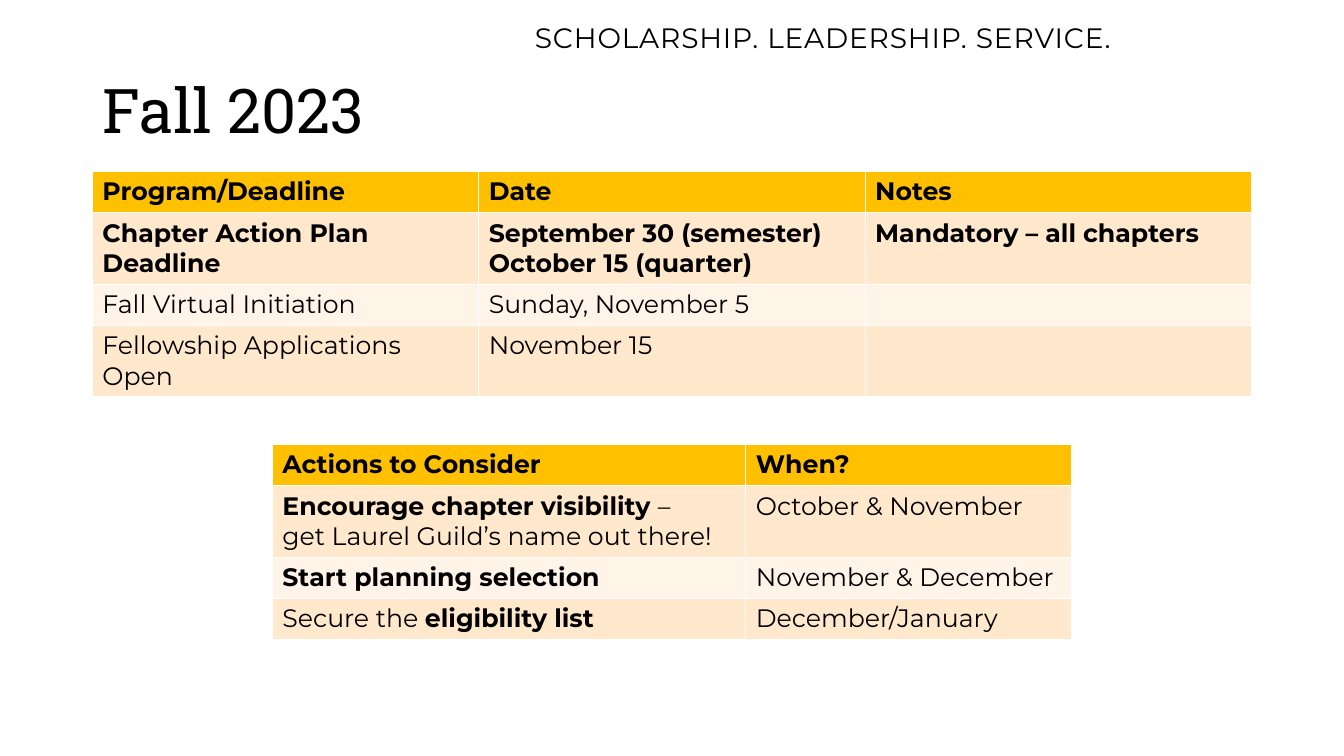
from pptx import Presentation
from pptx.dml.color import RGBColor
from pptx.enum.text import MSO_ANCHOR
from pptx.util import Pt

MIDDLE = MSO_ANCHOR.MIDDLE
BODY, HEAD = "Montserrat", "Roboto Slab"
BLACK, GOLD = "000000", "FFC000"
BANDS = ["FFE8CC", "FFF4E7"]
LINE, PAD = 21.5, 8

# Asterisks switch bold on and off; \n starts a paragraph, \v breaks a line.
DATES = [
    ["*Program/Deadline*", "*Date*", "*Notes*"],
    ["*Chapter Action Plan Deadline*",
     "*September 30 (semester)*\n*October 15 (quarter)*",
     "*Mandatory – all chapters*"],
    ["Fall Virtual Initiation", "Sunday, November 5", ""],
    ["Fellowship Applications Open", "November 15", ""],
]
ACTIONS = [
    ["*Actions to Consider*", "*When?*"],
    ["*Encourage chapter visibility *–\vget Laurel Guild’s name out there!",
     "October & November"],
    ["*Start planning selection*", "November & December"],
    ["Secure the *eligibility list*", "December/January"],
]


def color(code):
    return RGBColor.from_string(code)


def style(par, face, size, bold=False):
    par.font.name = face
    par.font.size = Pt(size)
    par.font.bold = bold
    par.font.color.rgb = color(BLACK)


def label(slide, box, text, face, size, wrap=True):
    """Add a one-paragraph text box and return its paragraph."""
    frame = slide.shapes.add_textbox(*map(Pt, box)).text_frame
    frame.word_wrap = wrap
    frame.vertical_anchor = MIDDLE
    par = frame.paragraphs[0]
    par.text = text
    style(par, face, size)
    return par


def motto(slide, box):
    par = label(slide, box, "SCHOLARSHIP. LEADERSHIP. SERVICE.", BODY, 20, wrap=False)
    par.runs[0].font._element.set("spc", "60")


def title(slide, box):
    label(slide, box, "Fall 2023", HEAD, 44).line_spacing = 0.9


def write(par, text):
    """Fill a paragraph from text with bold and break marks."""
    parts = text.split("*")
    style(par, BODY, 18, bold=len(parts) == 3 and not parts[0] + parts[2])
    mixed = not par.font.bold and len(parts) > 1
    for i, part in enumerate(parts):
        for j, piece in enumerate(part.split("\v")):
            if j:
                par.add_line_break()
            if piece:
                run = par.add_run()
                run.text = piece
                if mixed:
                    run.font.bold = i % 2 == 1


def grid(slide, left, top, widths, rows, lines):
    """Add a banded table; lines holds the count of text lines in each row."""
    highs = [PAD + LINE * n for n in lines]
    box = map(Pt, (left, top, sum(widths), sum(highs)))
    table = slide.shapes.add_table(len(rows), len(widths), *box).table
    for col, width in zip(table.columns, widths):
        col.width = Pt(width)
    for r, (row, high) in enumerate(zip(rows, highs)):
        table.rows[r].height = Pt(high)
        for c, text in enumerate(row):
            cell = table.cell(r, c)
            cell.fill.solid()
            cell.fill.fore_color.rgb = color(BANDS[(r - 1) % 2] if r else GOLD)
            frame = cell.text_frame
            for i, part in enumerate(text.split("\n")):
                write(frame.add_paragraph() if i else frame.paragraphs[0], part)


def main():
    deck = Presentation()
    deck.slide_width, deck.slide_height = Pt(960), Pt(540)
    slide = deck.slides.add_slide(deck.slide_layouts[6])
    motto(slide, (375, 11, 440, 31.5))
    title(slide, (66, 28.75, 828, 104.4))
    grid(slide, 66, 122.5, [276] * 3, DATES, [1, 2, 1, 2])
    grid(slide, 194.5, 317.5, [338.25, 232.5], ACTIONS, [1, 2, 1, 1])
    deck.save("out.pptx")


if __name__ == "__main__":
    main()
